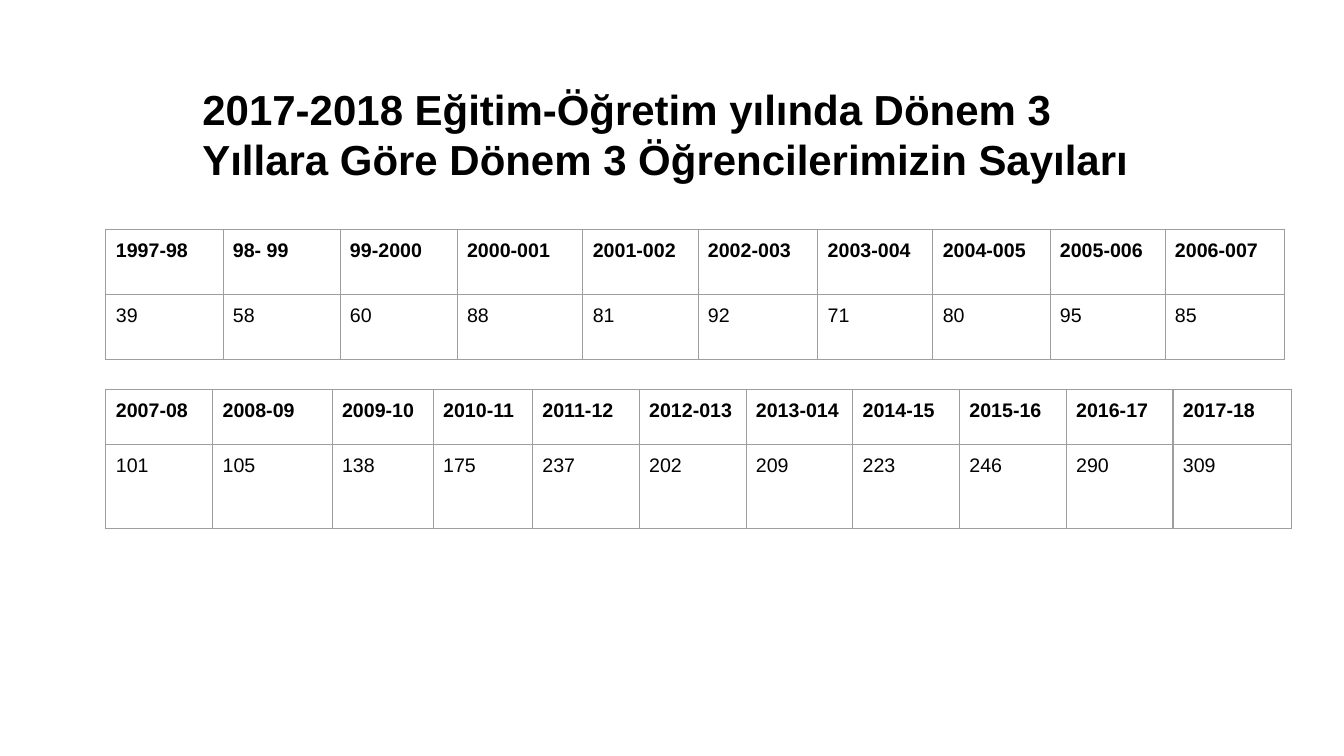
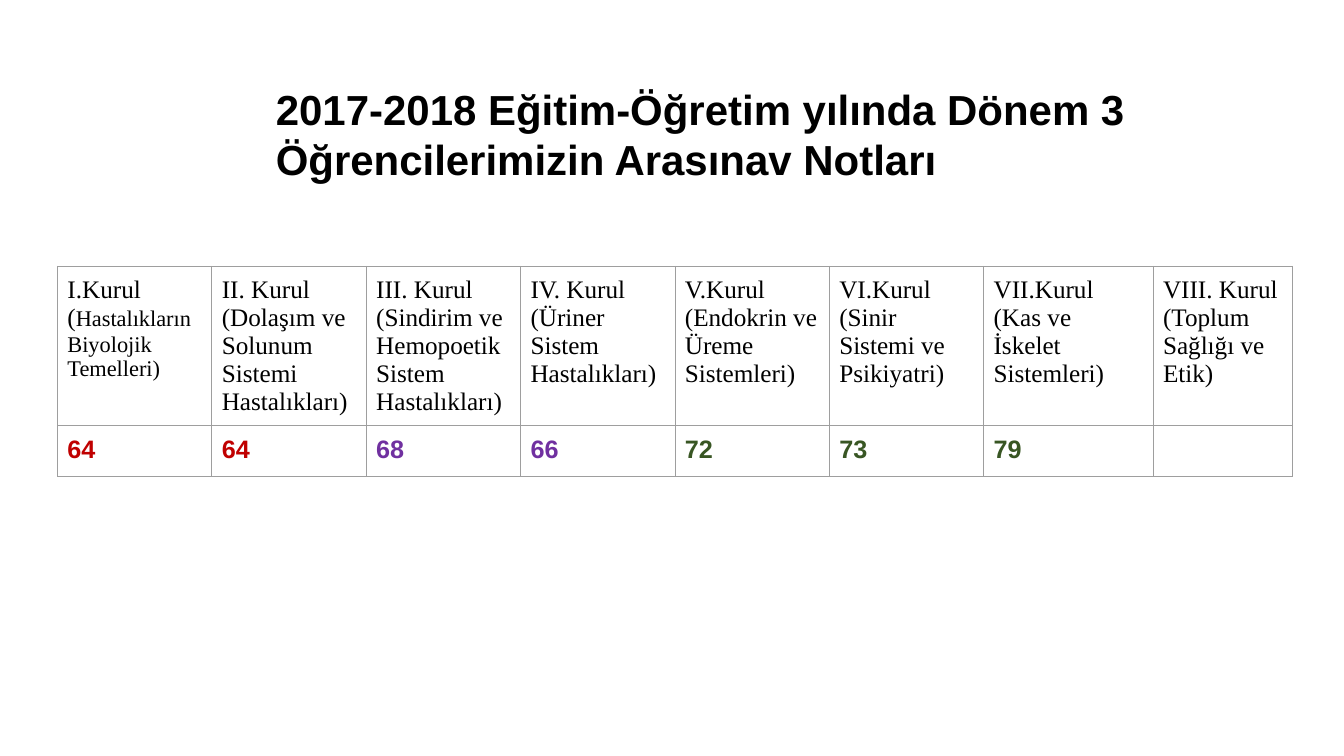
from lxml.etree import SubElement
from pptx import Presentation
from pptx.dml.color import RGBColor
from pptx.enum.text import MSO_ANCHOR as Anchor, MSO_AUTO_SIZE as AutoSize, PP_ALIGN as Align
from pptx.oxml.ns import qn
from pptx.util import Cm, Pt

BLACK, GRID = "000000", "9E9E9E"
RED, PURPLE, GREEN = "C00000", "7030A0", "385623"
SANS, SERIF = "Arial", "Times New Roman"
INSET = Cm(0.25)
TITLE_TOP = 1.85
TITLE_ONLY = 5

COUNTS_TITLE = (
    "2017-2018 Eğitim-Öğretim yılında Dönem 3 "
    "Yıllara Göre Dönem 3 Öğrencilerimizin Sayıları"
)
EARLY_YEARS = [
    ("1997-98", 39, 2.95), ("98- 99", 58, 2.95), ("99-2000", 60, 2.95),
    ("2000-001", 88, 3.17), ("2001-002", 81, 2.9), ("2002-003", 92, 3.02),
    ("2003-004", 71, 2.9), ("2004-005", 80, 2.95), ("2005-006", 95, 2.9),
    ("2006-007", 85, 3.02),
]
LATE_YEARS = [
    ("2007-08", 101, 2.69), ("2008-09", 105, 3.01), ("2009-10", 138, 2.55),
    ("2010-11", 175, 2.5), ("2011-12", 237, 2.69), ("2012-013", 202, 2.69),
    ("2013-014", 209, 2.69), ("2014-15", 223, 2.69), ("2015-16", 246, 2.69),
    ("2016-17", 290, 2.69),
]
CURRENT_YEAR = [("2017-18", 309, 2.98)]

GRADES_TITLE = "2017-2018 Eğitim-Öğretim yılında Dönem 3 Öğrencilerimizin Arasınav Notları"
BOARDS = [
    ([("I.Kurul (", 18), ("Hastalıkların Biyolojik Temelleri)", 16)], 64, RED, 3.89),
    ([("II. Kurul (Dolaşım ve Solunum Sistemi Hastalıkları)", 18)], 64, RED, 3.89),
    ([("III. Kurul (Sindirim ve Hemopoetik Sistem Hastalıkları)", 18)], 68, PURPLE, 3.89),
    ([("IV. Kurul (Üriner Sistem Hastalıkları)", 18)], 66, PURPLE, 3.89),
    ([("V.Kurul (Endokrin ve Üreme Sistemleri)", 18)], 72, GREEN, 3.89),
    ([("VI.Kurul (Sinir Sistemi ve Psikiyatri)", 18)], 73, GREEN, 3.89),
    ([("VII.Kurul (Kas ve İskelet Sistemleri)", 18)], 79, GREEN, 4.27),
    ([("VIII. Kurul (Toplum Sağlığı ve Etik)", 18)], None, GREEN, 3.5),
]


def color(value):
    return RGBColor.from_string(value)


def write(frame, text, size=14, font=SANS, ink=BLACK, bold=False):
    paragraph = frame.paragraphs[0]
    paragraph.alignment = Align.LEFT
    run = paragraph.add_run()
    run.text = str(text)
    run.font.size = Pt(size)
    run.font.name = font
    run.font.bold = bold
    run.font.color.rgb = color(ink)


def add_titled_slide(deck, text, left, width, height):
    slide = deck.slides.add_slide(deck.slide_layouts[TITLE_ONLY])
    title = slide.shapes.title
    title.left, title.top = Cm(left), Cm(TITLE_TOP)
    title.width, title.height = Cm(width), Cm(height)
    frame = title.text_frame
    frame.auto_size = AutoSize.NONE
    frame.word_wrap = True
    frame.vertical_anchor = Anchor.TOP
    frame.margin_left = frame.margin_right = INSET
    frame.margin_top = frame.margin_bottom = INSET
    write(frame, text, size=30, bold=True)
    return slide


def style_cell(cell):
    cell.fill.background()
    cell.margin_left = cell.margin_right = INSET
    cell.margin_top = cell.margin_bottom = INSET
    properties = cell._tc.get_or_add_tcPr()
    for position, side in enumerate(("lnL", "lnR", "lnT", "lnB")):
        border = SubElement(properties, qn(f"a:{side}"), w=str(Pt(0.75)))
        fill = SubElement(border, qn("a:solidFill"))
        SubElement(fill, qn("a:srgbClr"), val=GRID)
        properties.insert(position, border)


def add_grid(slide, left, top, widths, heights):
    table = slide.shapes.add_table(
        len(heights), len(widths), Cm(left), Cm(top), Cm(sum(widths)), Cm(sum(heights))
    ).table
    table.first_row = table.horz_banding = False
    for column, width in zip(table.columns, widths):
        column.width = Cm(width)
    for row, height in zip(table.rows, heights):
        row.height = Cm(height)
    for cell in table.iter_cells():
        style_cell(cell)
    return table


def add_counts(slide, years, left, top, heights):
    widths = [width for _, _, width in years]
    table = add_grid(slide, left, top, widths, heights)
    for column, (year, students, _) in enumerate(years):
        write(table.cell(0, column).text_frame, year, bold=True)
        write(table.cell(1, column).text_frame, students)
    return left + sum(widths)


def add_grades(slide, left, top, heights):
    table = add_grid(slide, left, top, [board[-1] for board in BOARDS], heights)
    for column, (name, grade, ink, _) in enumerate(BOARDS):
        for text, size in name:
            write(table.cell(0, column).text_frame, text, size=size, font=SERIF)
        if grade is not None:
            write(table.cell(1, column).text_frame, grade, size=18, ink=ink, bold=True)


def main():
    deck = Presentation()
    deck.slide_width, deck.slide_height = Cm(33.87), Cm(19.05)

    counts = add_titled_slide(deck, COUNTS_TITLE, 4.85, 24.13, 3.48)
    add_counts(counts, EARLY_YEARS, 2.67, 5.78, (1.64, 1.64))
    late_top, late_heights = 9.82, (1.39, 2.11)
    late_right = add_counts(counts, LATE_YEARS, 2.67, late_top, late_heights)
    add_counts(counts, CURRENT_YEAR, late_right, late_top, late_heights)

    grades = add_titled_slide(deck, GRADES_TITLE, 6.7, 22.3, 2.72)
    add_grades(grades, 1.45, 6.71, (4.01, 1.23))

    deck.save("out.pptx")


if __name__ == "__main__":
    main()
